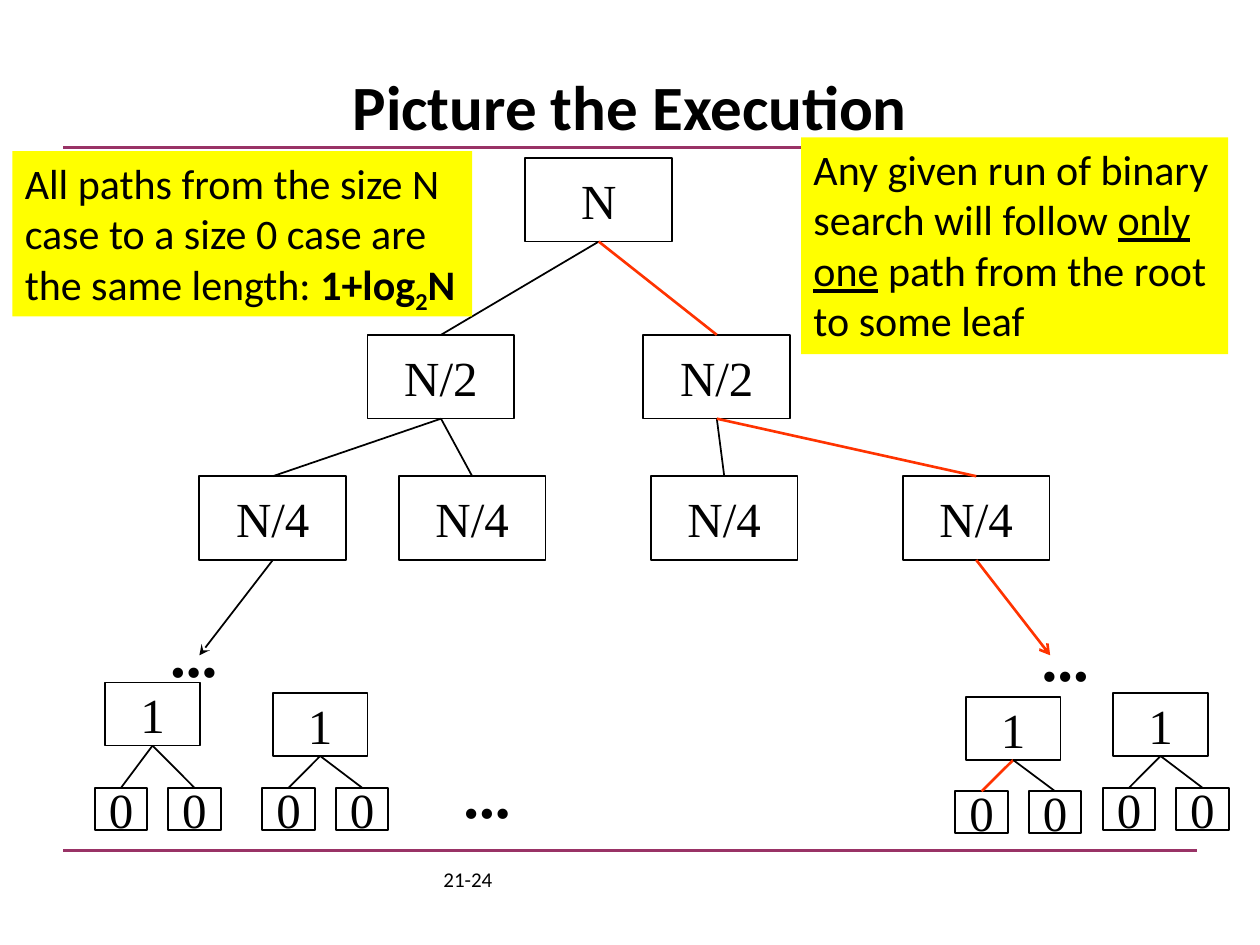
import pptx
import pptx.util
import pptx.dml.color
import pptx.enum.shapes
import pptx.enum.text
import pptx.oxml
import pptx.oxml.ns

Cm, Pt = pptx.util.Cm, pptx.util.Pt
ALIGN, ANCHOR = pptx.enum.text.PP_ALIGN, pptx.enum.text.MSO_ANCHOR
RECT = pptx.enum.shapes.MSO_SHAPE.RECTANGLE
STRAIGHT = pptx.enum.shapes.MSO_CONNECTOR.STRAIGHT
BLACK, RED, PLUM, YELLOW = "000000", "FF3300", "993366", "FFFF00"


def rgb(value):
    return pptx.dml.color.RGBColor.from_string(value)


def add_text(tf, text, size=28, font="Times New Roman", color=BLACK, bold=False,
             underline=False, baseline=None, align=ALIGN.LEFT,
             anchor=ANCHOR.TOP, wrap=True):
    """Append a run to the first paragraph and format it."""
    tf.word_wrap, tf.vertical_anchor = wrap, anchor
    p = tf.paragraphs[0]
    p.alignment = align
    r = p.add_run()
    r.text = text
    r.font.size, r.font.name = Pt(size), font
    r.font.bold, r.font.underline = bold, underline
    r.font.color.rgb = rgb(color)
    if baseline:
        r._r.get_or_add_rPr().set("baseline", str(baseline))


prs = pptx.Presentation()
prs.slide_width, prs.slide_height = Cm(25.4), Cm(19.05)
s = prs.slides.add_slide(prs.slide_layouts[5])

# Title
title = s.shapes.title
title.left, title.top, title.width, title.height = Cm(1.27), Cm(1.27), Cm(22.86), Cm(1.7)
add_text(title.text_frame, "Picture the Execution", size=36, font="Calibri",
         bold=True, align=ALIGN.CENTER, anchor=ANCHOR.MIDDLE)

# Tree nodes: key, label, left, top, width, height
nodes = [("root", "N", 10.59, 3.18, 2.96, 1.69)]
nodes += [(f"half{i}", "N/2", x, 6.75, 2.96, 1.69) for i, x in enumerate((7.41, 12.97))]
nodes += [(f"quarter{i}", "N/4", x, 9.6, 2.96, 1.69)
          for i, x in enumerate((4.02, 8.04, 13.12, 18.2))]
# Edges: parent, child or end point, colour, arrowhead
edges = [("root", "half0", BLACK, None), ("root", "half1", RED, None),
         ("half0", "quarter0", BLACK, None), ("half0", "quarter1", BLACK, None),
         ("half1", "quarter2", BLACK, None), ("half1", "quarter3", RED, None),
         ("quarter0", (4.02, 13.21), BLACK, "stealth"),
         ("quarter3", (21.17, 13.21), RED, "arrow")]

# Bottom of the tree: each size 1 case has two size 0 cases
bottom = [(2.12, 13.76, 15.88), (5.5, 13.97, 15.88),
          (19.47, 14.05, 15.95), (22.44, 13.97, 15.88)]
for i, (x, y, leaf_y) in enumerate(bottom):
    nodes.append((f"one{i}", "1", x, y, 1.91, 1.27))
    for side, dx in enumerate((-0.21, 1.27)):
        leaf = f"zero{i}{side}"
        nodes.append((leaf, "0", x + dx, leaf_y, 1.06, 0.85))
        edges.append((f"one{i}", leaf, RED if (i, side) == (2, 0) else BLACK, None))

boxes = {}
for key, label, x, y, w, h in nodes:
    sp = s.shapes.add_shape(RECT, Cm(x), Cm(y), Cm(w), Cm(h))
    sp.shadow.inherit = False
    sp.fill.background()
    sp.line.color.rgb, sp.line.width = rgb(BLACK), Pt(1)
    add_text(sp.text_frame, label, align=ALIGN.CENTER, anchor=ANCHOR.MIDDLE, wrap=False)
    boxes[key] = sp

# Rules and edges
lines = []
for y in (2.97, 17.15):
    rule = s.shapes.add_connector(STRAIGHT, Cm(1.27), Cm(y), Cm(24.13), Cm(y))
    lines.append((rule, PLUM, 2, None))
for parent, end, color, head in edges:
    x, y = (0, 0) if end in boxes else end
    edge = s.shapes.add_connector(STRAIGHT, 0, 0, Cm(x), Cm(y))
    edge.begin_connect(boxes[parent], 2)
    if end in boxes:
        edge.end_connect(boxes[end], 0)
    lines.append((edge, color, 1.5 if color == RED else 1, head))
for line, color, width, head in lines:
    line.line.color.rgb, line.line.width = rgb(color), Pt(width)
    if head:
        tail = pptx.oxml.parse_xml(
            f'<a:tailEnd {pptx.oxml.ns.nsdecls("a")} type="{head}"/>')
        line.line._get_or_add_ln().append(tail)
    line._element.spPr.append(
        pptx.oxml.parse_xml(f'<a:effectLst {pptx.oxml.ns.nsdecls("a")}/>'))

# Ellipses
for x, y in ((9.09, 15.11), (3.18, 12.27), (20.75, 12.34)):
    sp = s.shapes.add_textbox(Cm(x), Cm(y), Cm(1.48), Cm(1.78))
    add_text(sp.text_frame, "...", size=36, bold=True, wrap=False)

# Yellow notes
notes = [
    ((0.25, 3.05, 9.27, 3.33), [
        ("All paths from the size N case to a size 0 case are the same length: ", {}),
        ("1+log", {"bold": True}),
        ("2", {"bold": True, "baseline": -25000}),
        ("N", {"bold": True})]),
    ((16.15, 2.77, 8.61, 4.37), [
        ("Any given run of binary search will follow ", {}),
        ("only one", {"underline": True}),
        (" path from the root to some leaf", {})]),
]
for place, runs in notes:
    sp = s.shapes.add_shape(RECT, *[Cm(v) for v in place])
    sp.shadow.inherit = False
    sp.fill.solid()
    sp.fill.fore_color.rgb = rgb(YELLOW)
    sp.line.fill.background()
    for text, style in runs:
        add_text(sp.text_frame, text, size=24, font="Calibri", **style)

# Page number
sp = s.shapes.add_textbox(Cm(8.69), Cm(17.35), Cm(8.05), Cm(1.27))
add_text(sp.text_frame, "21-24", size=12, font="Calibri")

prs.save("out.pptx")
